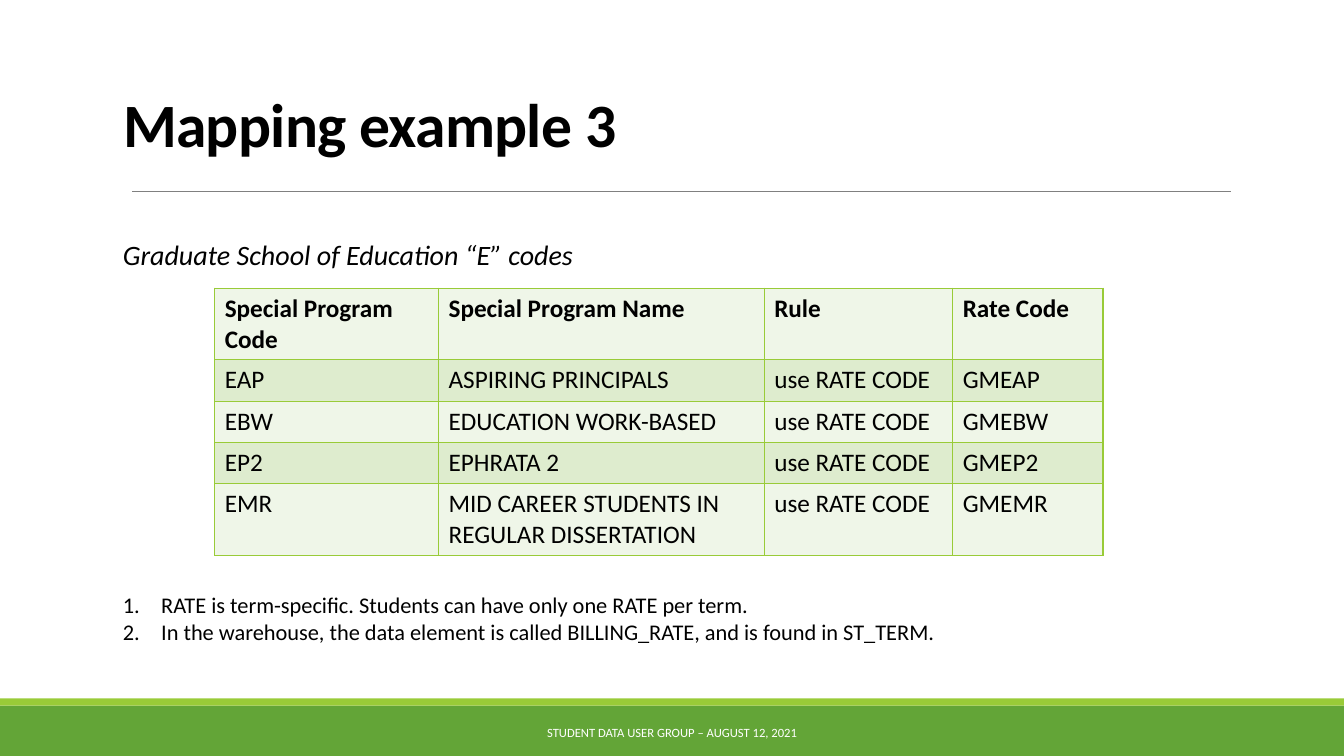
from dataclasses import dataclass

from lxml import etree
from pptx import Presentation
from pptx.dml.color import RGBColor
from pptx.enum.shapes import MSO_CONNECTOR, MSO_SHAPE
from pptx.enum.text import MSO_ANCHOR, MSO_AUTO_SIZE, PP_ALIGN
from pptx.oxml.ns import qn
from pptx.slide import Slide
from pptx.table import _Cell
from pptx.text.text import TextFrame, _Paragraph
from pptx.util import Pt

RECTANGLE = MSO_SHAPE.RECTANGLE
STRAIGHT = MSO_CONNECTOR.STRAIGHT
TOP, MIDDLE, BOTTOM = MSO_ANCHOR.TOP, MSO_ANCHOR.MIDDLE, MSO_ANCHOR.BOTTOM
LEFT, CENTER = PP_ALIGN.LEFT, PP_ALIGN.CENTER
NO_AUTOFIT = MSO_AUTO_SIZE.NONE

EMU_PER_PX = 9144  # 100 px to the inch
FONT = "Calibri"
BLACK = RGBColor(0x00, 0x00, 0x00)
WHITE = RGBColor(0xFF, 0xFF, 0xFF)
GRAY = RGBColor(0x80, 0x80, 0x80)
GREEN = RGBColor(0x63, 0xA5, 0x37)
LIME = RGBColor(0x99, 0xCB, 0x38)
PALE_BAND = RGBColor(0xEF, 0xF6, 0xE8)
DEEP_BAND = RGBColor(0xDE, 0xEC, 0xCE)


@dataclass(frozen=True)
class Box:
    left: int
    top: int
    width: int
    height: int

    def emu(self) -> tuple[int, int, int, int]:
        return px(self.left), px(self.top), px(self.width), px(self.height)


@dataclass(frozen=True)
class Style:
    size: int
    color: RGBColor = BLACK
    bold: bool = False
    italic: bool = False


@dataclass(frozen=True)
class Band:
    box: Box
    color: RGBColor


@dataclass(frozen=True)
class TextBlock:
    box: Box
    lines: tuple[str, ...]
    style: Style
    align: PP_ALIGN = LEFT
    anchor: MSO_ANCHOR = TOP
    numbered: bool = False


FOOTER_BANDS = (
    Band(Box(0, 700, 1333, 50), GREEN),
    Band(Box(0, 693, 1333, 7), LIME),
)
TITLE_BOX = Box(112, 94, 1230, 70)
TITLE_STYLE = Style(44, bold=True)
TEXT_BLOCKS = (
    TextBlock(Box(403, 707, 527, 40), ("STUDENT DATA USER GROUP – AUGUST 12, 2021",),
              Style(9, WHITE), CENTER, MIDDLE),
    TextBlock(Box(112, 231, 671, 44), ("Graduate School of Education “E” codes",),
              Style(20, italic=True)),
    TextBlock(Box(112, 582, 1129, 64),
              ("RATE is term-specific. Students can have only one RATE per term.",
               "In the warehouse, the data element is called BILLING_RATE, and is found in ST_TERM."),
              Style(16), numbered=True),
)
NUMBER_INDENT = 38

RULE = "use RATE CODE"
CODE_ROWS = (
    ("Special Program Code", "Special Program Name", "Rule", "Rate Code"),
    ("EAP", "ASPIRING PRINCIPALS", RULE, "GMEAP"),
    ("EBW", "EDUCATION WORK-BASED", RULE, "GMEBW"),
    ("EP2", "EPHRATA 2", RULE, "GMEP2"),
    ("EMR", "MID CAREER STUDENTS IN REGULAR DISSERTATION", RULE, "GMEMR"),
)
COLUMN_WIDTHS = (222, 323, 187, 149)
ROW_HEIGHTS = (70, 41, 41, 41, 70)
TABLE_BOX = Box(213, 286, sum(COLUMN_WIDTHS), sum(ROW_HEIGHTS))


def px(length: int) -> int:
    return length * EMU_PER_PX


def add_run(paragraph: _Paragraph, text: str, style: Style) -> None:
    run = paragraph.add_run()
    run.text = text
    font = run.font
    font.name, font.size = FONT, Pt(style.size)
    font.bold, font.italic = style.bold, style.italic
    font.color.rgb = style.color


def number_paragraph(paragraph: _Paragraph) -> None:
    properties = paragraph._p.get_or_add_pPr()
    properties.set("marL", str(px(NUMBER_INDENT)))
    properties.set("indent", str(-px(NUMBER_INDENT)))
    etree.SubElement(properties, qn("a:buFont"), typeface="+mj-lt")
    etree.SubElement(properties, qn("a:buAutoNum"), type="arabicPeriod")


def set_frame(frame: TextFrame, anchor: MSO_ANCHOR) -> None:
    frame.word_wrap = True
    frame.auto_size = NO_AUTOFIT
    frame.vertical_anchor = anchor


def add_band(slide: Slide, band: Band) -> None:
    shape = slide.shapes.add_shape(RECTANGLE, *band.box.emu())
    shape.shadow.inherit = False
    shape.fill.solid()
    shape.fill.fore_color.rgb = band.color
    shape.line.fill.background()


def add_title_rule(slide: Slide) -> None:
    rule = slide.shapes.add_connector(STRAIGHT, px(131), px(190), px(1221), px(190))
    rule.line.color.rgb = GRAY
    rule.line.width = Pt(0.5)
    etree.SubElement(rule._element.spPr, qn("a:effectLst"))


def set_title(slide: Slide, text: str) -> None:
    title = slide.shapes.title
    title.left, title.top, title.width, title.height = TITLE_BOX.emu()
    set_frame(title.text_frame, BOTTOM)
    paragraph = title.text_frame.paragraphs[0]
    paragraph.alignment = LEFT
    paragraph.line_spacing = 0.85
    add_run(paragraph, text, TITLE_STYLE)
    paragraph.runs[0].font._element.set("spc", "-50")


def add_text_block(slide: Slide, block: TextBlock) -> None:
    frame = slide.shapes.add_textbox(*block.box.emu()).text_frame
    set_frame(frame, block.anchor)
    for index, line in enumerate(block.lines):
        paragraph = frame.add_paragraph() if index else frame.paragraphs[0]
        paragraph.alignment = block.align
        if block.numbered:
            number_paragraph(paragraph)
        add_run(paragraph, line, block.style)


def add_borders(cell: _Cell) -> None:
    properties = cell._tc.get_or_add_tcPr()
    for side in ("a:lnL", "a:lnR", "a:lnT", "a:lnB"):
        border = etree.SubElement(properties, qn(side), w=str(Pt(1)))
        fill = etree.SubElement(border, qn("a:solidFill"))
        etree.SubElement(fill, qn("a:srgbClr"), val=str(LIME))


def add_code_table(slide: Slide) -> None:
    frame = slide.shapes.add_table(len(CODE_ROWS), len(COLUMN_WIDTHS), *TABLE_BOX.emu())
    table = frame.table
    for column, width in zip(table.columns, COLUMN_WIDTHS):
        column.width = px(width)
    for row_index, (row, height) in enumerate(zip(table.rows, ROW_HEIGHTS)):
        row.height = px(height)
        style = Style(18, bold=row_index == 0)
        for cell, text in zip(row.cells, CODE_ROWS[row_index]):
            add_borders(cell)
            cell.fill.solid()
            cell.fill.fore_color.rgb = DEEP_BAND if row_index % 2 else PALE_BAND
            add_run(cell.text_frame.paragraphs[0], text, style)


def main() -> None:
    presentation = Presentation()
    presentation.slide_width, presentation.slide_height = px(1333), px(750)
    slide = presentation.slides.add_slide(presentation.slide_layouts[5])

    # Footer bands and the line under the title
    for band in FOOTER_BANDS:
        add_band(slide, band)
    add_title_rule(slide)

    # Title, footer, subtitle and notes
    set_title(slide, "Mapping example 3")
    for block in TEXT_BLOCKS:
        add_text_block(slide, block)

    # Program codes
    add_code_table(slide)
    presentation.save("out.pptx")


if __name__ == "__main__":
    main()
